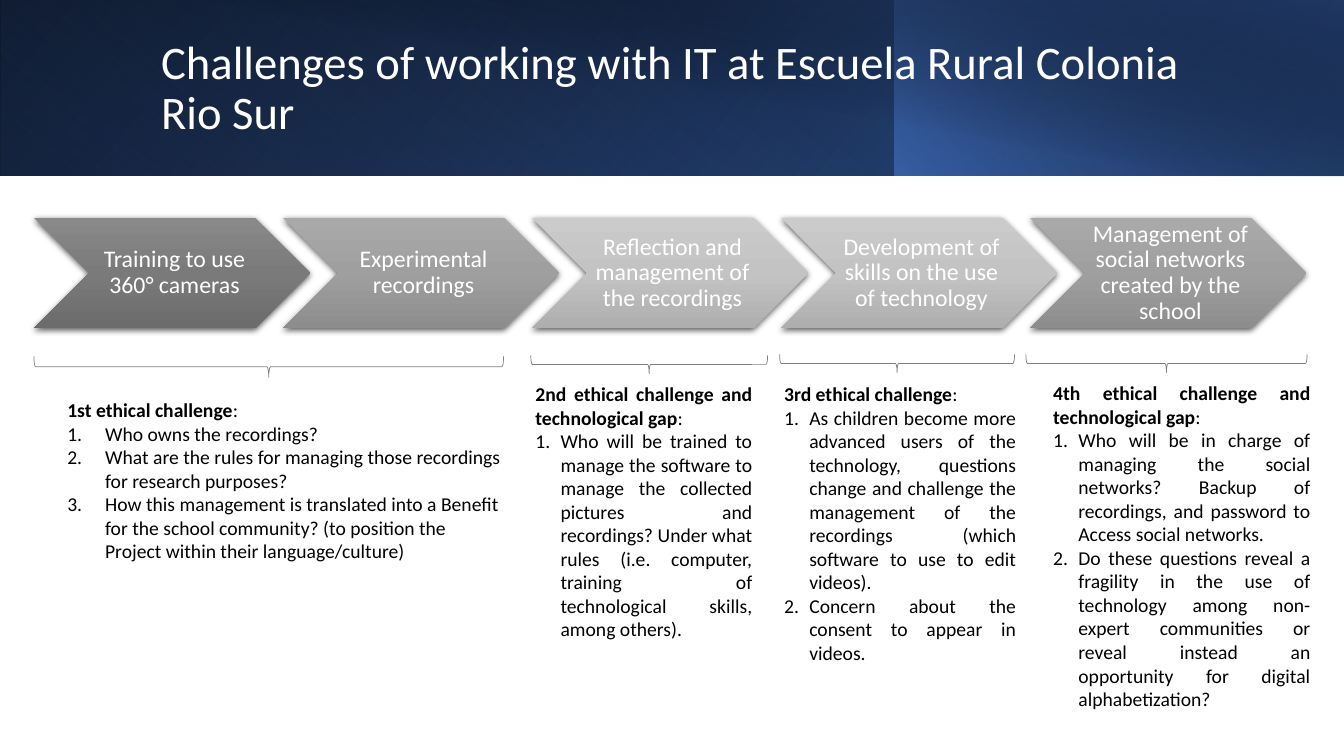
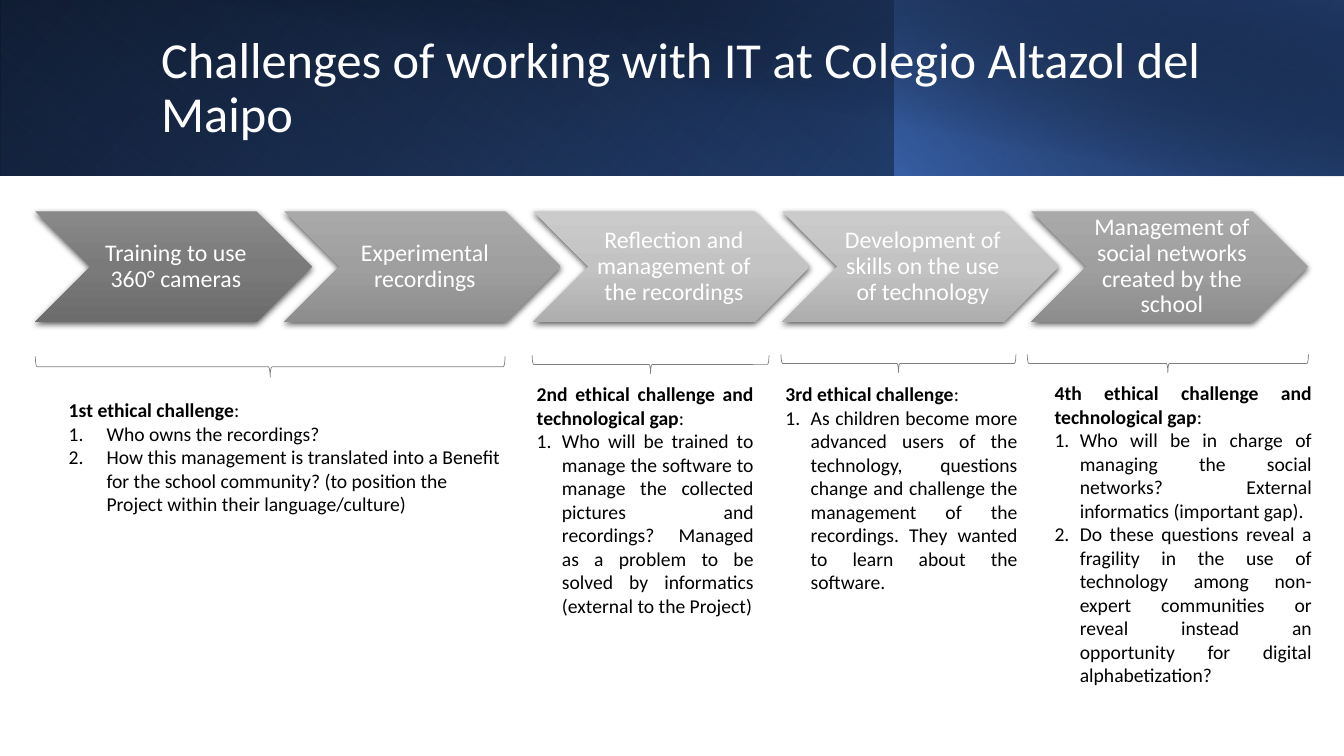
from dataclasses import dataclass

from pptx import Presentation, oxml
from pptx.dml.color import RGBColor
from pptx.enum import shapes, text
from pptx.oxml import ns
from pptx.util import Pt

FONT = "Calibri"
COLORS = {
    "white": "FFFFFF",
    "black": "000000",
    "brace": "808080",
    "blue": "4472C4",
    "deep blue": "2F5597",
    "navy": "203864",
}
# Three-stop fills of the process steps, top to bottom
STEP_FILLS = {
    "dark": ("898989", "7A7A7A", "6C6C6C"),
    "medium": ("A9A9A9", "9F9F9F", "8D8D8D"),
    "light": ("CBCBCB", "C3C3C3", "AEAEAE"),
}


@dataclass(frozen=True)
class Stop:
    position: int
    color: str
    opacity: int = 100


@dataclass(frozen=True)
class Band:
    left: float
    width: float
    height: float
    angle: int
    stops: tuple[Stop, ...]
    flipped: bool = True
    rotation: int = 0


@dataclass(frozen=True)
class Step:
    label: str
    shade: str


@dataclass(frozen=True)
class Column:
    """A brace and the place of the challenge under it."""
    brace_center: float
    brace_middle: float
    brace_span: float
    brace_depth: float
    left: float
    top: float
    width: float
    indent: float
    alignment: text.PP_ALIGN


@dataclass(frozen=True)
class Challenge:
    heading: str
    questions: tuple[str, ...]
    height: float


@dataclass(frozen=True)
class School:
    title: str
    title_size: float
    shift: float
    steps_top: float
    challenges: tuple[Challenge, ...]


BANDS = (
    Band(0, 960, 125.5, 140,
         (Stop(0, COLORS["black"]), Stop(100, COLORS["deep blue"]))),
    Band(0, 639, 125.5, 230,
         (Stop(20, COLORS["blue"], 0), Stop(100, COLORS["navy"], 55)), rotation=180),
    Band(638.7, 321.3, 125.5, 220,
         (Stop(0, COLORS["blue"], 66), Stop(100, COLORS["black"], 30))),
    Band(36, 924, 126, 280,
         (Stop(50, COLORS["black"], 0), Stop(99, COLORS["navy"], 52)), flipped=False),
)

STEP_LEFT, STEP_WIDTH, STEP_HEIGHT, STEP_PITCH = 24.2, 197.5, 79, 177.85
STEPS = (
    Step("Training to use 360° cameras", "dark"),
    Step("Experimental recordings", "medium"),
    Step("Reflection and management of the recordings", "light"),
    Step("Development of skills on the use of technology", "light"),
    Step("Management of social networks created by the school", "medium"),
)

LEFT, JUSTIFIED = text.PP_ALIGN.LEFT, text.PP_ALIGN.JUSTIFY
COLUMNS = (
    Column(192, 262, 335.5, 15, 41, 280.8, 324.7, 27, LEFT),
    Column(463.7, 260.3, 169.2, 13, 375.3, 269.3, 169.2, 18, JUSTIFIED),
    Column(640.8, 259.6, 167.8, 13, 553, 269.3, 180, 18, JUSTIFIED),
    Column(833.2, 259.6, 200.9, 13, 745.2, 268.6, 198, 18, JUSTIFIED),
)

HEADINGS = (
    "1st ethical challenge",
    "2nd ethical challenge and technological gap",
    "3rd ethical challenge",
    "4th ethical challenge and technological gap",
)
OWNERSHIP = "Who owns the recordings?"
BENEFIT = (
    "How this management is translated into a Benefit for the school community? "
    "(to position the Project within their language/culture)"
)
TRAINING = (
    "Who will be trained to manage the software to manage the collected pictures "
    "and recordings? "
)
ADVANCED_USERS = (
    "As children become more advanced users of the technology, questions change "
    "and challenge the management of the recordings"
)
NETWORKS = "Who will be in charge of managing the social networks? "
FRAGILITY = (
    "Do these questions reveal a fragility in the use of technology among "
    "non-expert communities or reveal instead an opportunity for digital "
    "alphabetization?"
)

SCHOOLS = (
    School(
        "Challenges of working with IT at Escuela Rural Colonia Rio Sur", 33.3, 0, 155.5,
        (
            Challenge(HEADINGS[0], (
                OWNERSHIP,
                "What are the rules for managing those recordings for research purposes?",
                BENEFIT,
            ), 126),
            Challenge(HEADINGS[1], (
                TRAINING + "Under what rules (i.e. computer, training of "
                "technological skills, among others).",
            ), 227.5),
            Challenge(HEADINGS[2], (
                ADVANCED_USERS + " (which software to use to edit videos).",
                "Concern about the consent to appear in videos.",
            ), 244.8),
            Challenge(HEADINGS[3], (
                NETWORKS + "Backup of recordings, and password to Access social networks.",
                FRAGILITY,
            ), 262),
        ),
    ),
    School(
        "Challenges of working with IT at Colegio Altazol del Maipo", 36, 1, 151,
        (
            Challenge(HEADINGS[0], (OWNERSHIP, BENEFIT), 92.2),
            Challenge(HEADINGS[1], (
                TRAINING + "Managed as a problem to be solved by informatics "
                "(external to the Project)",
            ), 211),
            Challenge(HEADINGS[2], (
                ADVANCED_USERS + ". They wanted to learn about the software.",
            ), 193.7),
            Challenge(HEADINGS[3], (
                NETWORKS + "External informatics (important gap).",
                FRAGILITY,
            ), 244.8),
        ),
    ),
)


def style_run(run, size: float, color: str, bold: bool = False) -> None:
    run.font.name = FONT
    run.font.size = Pt(size)
    run.font.bold = bold
    run.font.color.rgb = RGBColor.from_string(COLORS[color])


def add_plain_shape(slide, kind, left: float, top: float, width: float, height: float):
    """Add a preset shape without fill, line or shadow."""
    shape = slide.shapes.add_shape(kind, Pt(left), Pt(top), Pt(width), Pt(height))
    shape.shadow.inherit = False
    shape.fill.background()
    shape.line.fill.background()
    return shape


def fill_gradient(shape, stops: tuple[Stop, ...], angle: int) -> None:
    """Replace the empty fill by a linear gradient, its angle clockwise."""
    stop_xml = "".join(
        f'<a:gs pos="{stop.position * 1000}"><a:srgbClr val="{stop.color}">'
        f'<a:alpha val="{stop.opacity * 1000}"/></a:srgbClr></a:gs>'
        for stop in stops
    )
    gradient = oxml.parse_xml(
        f'<a:gradFill {ns.nsdecls("a")} rotWithShape="1"><a:gsLst>{stop_xml}</a:gsLst>'
        f'<a:lin ang="{angle * 60000}" scaled="0"/></a:gradFill>'
    )
    properties = shape.element.spPr
    properties.replace(properties.find(ns.qn("a:noFill")), gradient)


def add_soft_shadow(shape) -> None:
    shape.element.spPr.find(ns.qn("a:effectLst")).append(oxml.parse_xml(
        f'<a:outerShdw {ns.nsdecls("a")} blurRad="{Pt(4.5)}" dist="{Pt(1.5)}" '
        f'dir="5400000" algn="ctr" rotWithShape="0"><a:srgbClr val="{COLORS["black"]}">'
        '<a:alpha val="63000"/></a:srgbClr></a:outerShdw>'
    ))


def add_header(slide, title: str, size: float) -> None:
    for band in BANDS:
        rectangle = add_plain_shape(
            slide, shapes.MSO_SHAPE.RECTANGLE, band.left, 0, band.width, band.height)
        rectangle.rotation = band.rotation
        if band.flipped:
            rectangle.element.spPr.find(ns.qn("a:xfrm")).set("flipH", "1")
        fill_gradient(rectangle, band.stops, band.angle)
    frame = slide.shapes.add_textbox(Pt(108), Pt(23), Pt(779), Pt(81.4)).text_frame
    frame.word_wrap = True
    frame.vertical_anchor = text.MSO_ANCHOR.MIDDLE
    frame.text = title
    frame.paragraphs[0].line_spacing = 0.9
    style_run(frame.paragraphs[0].runs[0], size, "white")


def add_step(slide, step: Step, left: float, top: float) -> None:
    chevron = add_plain_shape(
        slide, shapes.MSO_SHAPE.CHEVRON, left, top, STEP_WIDTH, STEP_HEIGHT)
    shades = zip((0, 50, 100), STEP_FILLS[step.shade])
    fill_gradient(chevron, tuple(Stop(*shade) for shade in shades), 90)
    add_soft_shadow(chevron)
    frame = chevron.text_frame
    frame.word_wrap = True
    frame.vertical_anchor = text.MSO_ANCHOR.MIDDLE
    frame.margin_left = Pt(5)
    frame.margin_right = frame.margin_top = frame.margin_bottom = Pt(1.5)
    frame.text = step.label
    label = frame.paragraphs[0]
    label.alignment = text.PP_ALIGN.CENTER
    label.line_spacing = 0.9
    style_run(label.runs[0], 17, "white")


def add_brace(slide, column: Column, shift: float) -> None:
    brace = add_plain_shape(
        slide, shapes.MSO_SHAPE.LEFT_BRACE,
        column.brace_center - column.brace_depth / 2 + shift,
        column.brace_middle - column.brace_span / 2,
        column.brace_depth, column.brace_span)
    brace.rotation = 270
    brace.line.color.rgb = RGBColor.from_string(COLORS["brace"])
    brace.line.width = Pt(0.5)


def add_challenge(slide, challenge: Challenge, column: Column, shift: float) -> None:
    frame = slide.shapes.add_textbox(
        Pt(column.left + shift), Pt(column.top),
        Pt(column.width), Pt(challenge.height)).text_frame
    frame.word_wrap = True
    frame.auto_size = text.MSO_AUTO_SIZE.SHAPE_TO_FIT_TEXT
    frame.text = "\n".join((challenge.heading, *challenge.questions))
    heading, *questions = frame.paragraphs
    heading.alignment = column.alignment
    style_run(heading.runs[0], 14, "black", bold=True)
    colon = heading.add_run()
    colon.text = ":"
    style_run(colon, 14, "black")
    for question in questions:
        properties = question._p.get_or_add_pPr()
        properties.set("marL", str(Pt(column.indent)))
        properties.set("indent", str(-Pt(column.indent)))
        properties.append(oxml.parse_xml(
            f'<a:buAutoNum {ns.nsdecls("a")} type="arabicPeriod"/>'))
        question.alignment = column.alignment
        style_run(question.runs[0], 14, "black")


def add_school(presentation, school: School) -> None:
    slide = presentation.slides.add_slide(presentation.slide_layouts[6])
    add_header(slide, school.title, school.title_size)
    for index, step in enumerate(STEPS):
        add_step(slide, step, STEP_LEFT + school.shift + index * STEP_PITCH, school.steps_top)
    for column, challenge in zip(COLUMNS, school.challenges):
        add_brace(slide, column, school.shift)
        add_challenge(slide, challenge, column, school.shift)


def main() -> None:
    presentation = Presentation()
    presentation.slide_width, presentation.slide_height = Pt(960), Pt(540)
    for school in SCHOOLS:
        add_school(presentation, school)
    presentation.save("out.pptx")


if __name__ == "__main__":
    main()
